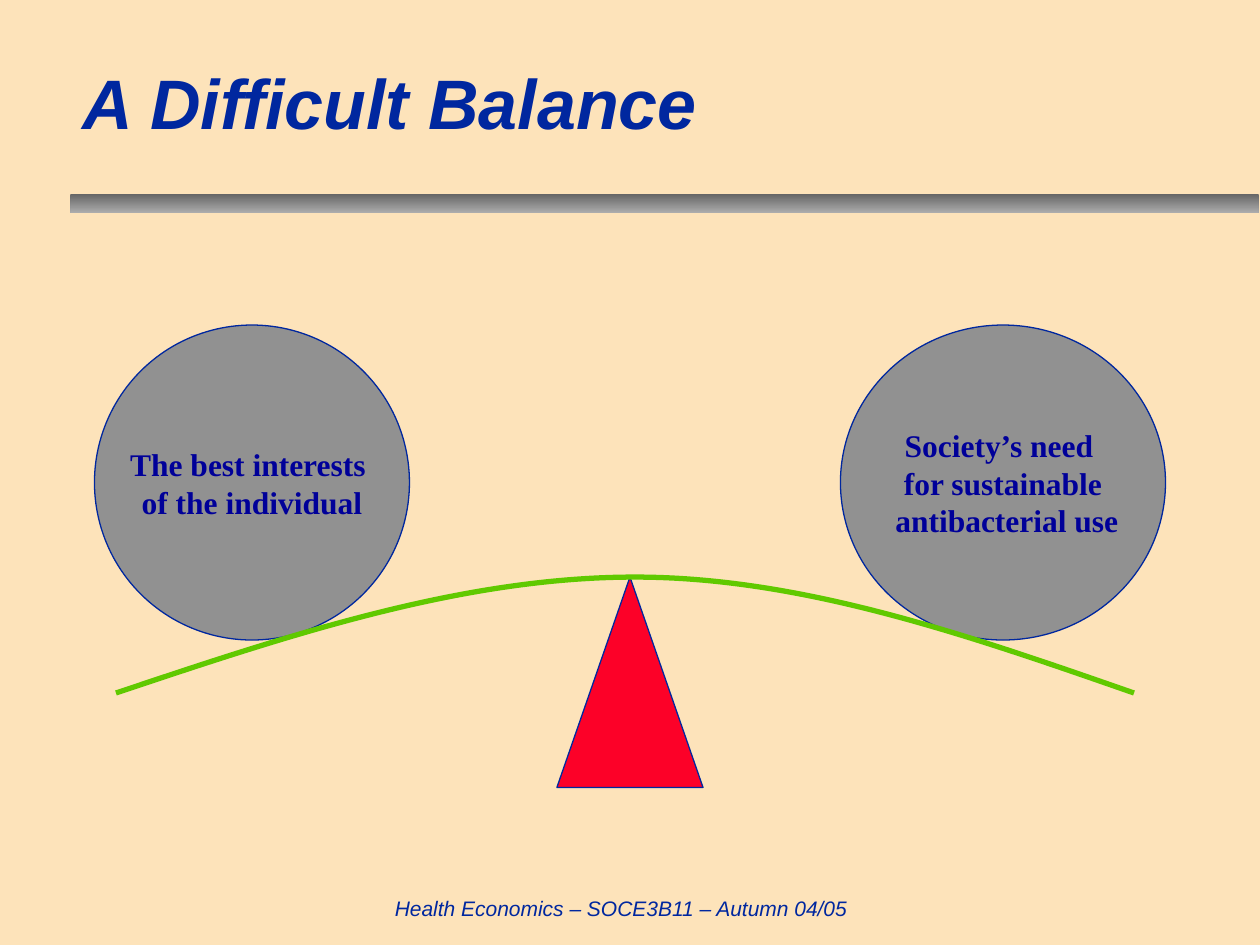
from lxml.etree import SubElement
from pptx import Presentation
from pptx.dml.color import RGBColor
from pptx.enum.shapes import MSO_SHAPE as Shape
from pptx.enum.text import MSO_ANCHOR as Anchor, PP_ALIGN as Align
from pptx.oxml.ns import qn
from pptx.util import Inches, Pt

CREAM = RGBColor(0xFD, 0xE3, 0xBA)
NAVY = RGBColor(0x00, 0x27, 0x9F)
TEXT_BLUE = RGBColor(0x00, 0x00, 0x99)
DARK_GRAY = RGBColor(0x66, 0x66, 0x66)
LIGHT_GRAY = RGBColor(0xAC, 0xAC, 0xAC)
BALL_GRAY = RGBColor(0x91, 0x91, 0x91)
RED = RGBColor(0xFC, 0x01, 0x28)
GREEN = RGBColor(0x60, 0xC9, 0x00)


def write_lines(shape, lines, font_name, size, color, align, bold=False, italic=False):
    frame = shape.text_frame
    frame.text = "\n".join(lines)
    frame.vertical_anchor = Anchor.MIDDLE
    for paragraph in frame.paragraphs:
        paragraph.alignment = align
        for run in paragraph.runs:
            font = run.font
            font.name, font.size = font_name, Pt(size)
            font.bold, font.italic = bold, italic
            font.color.rgb = color


def add_label(slide, box, text, size, align, bold=False):
    label = slide.shapes.add_textbox(*map(Inches, box))
    label.text_frame.word_wrap = True
    write_lines(label, [text], "Arial", size, NAVY, align, bold, italic=True)


def add_solid(slide, kind, box, color):
    shape = slide.shapes.add_shape(kind, *map(Inches, box))
    shape.shadow.inherit = False
    shape.fill.solid()
    shape.fill.fore_color.rgb = color
    shape.line.color.rgb = NAVY
    shape.line.width = Pt(0.75)
    return shape


def add_divider(slide, box):
    bar = slide.shapes.add_shape(Shape.RECTANGLE, *map(Inches, box))
    bar.shadow.inherit = False
    bar.line.fill.background()
    bar.fill.gradient()
    bar.fill.gradient_angle = 270  # top to bottom
    for stop, color in zip(bar.fill.gradient_stops, (DARK_GRAY, LIGHT_GRAY)):
        stop.color.rgb = color


def add_ball(slide, box, lines):
    ball = add_solid(slide, Shape.OVAL, box, BALL_GRAY)
    write_lines(ball, lines, "Times New Roman", 18, TEXT_BLUE, Align.CENTER, bold=True)
    ball.text_frame.word_wrap = False


def add_beam(slide, box):
    left, top, width, height = map(Inches, box)
    middle = Inches(5.04)
    builder = slide.shapes.build_freeform(left, top + height, scale=1.0)
    builder.add_line_segments([(middle, top), (left + width, top + height)], close=False)
    beam = builder.convert_to_shape()
    beam.shadow.inherit = False
    beam.fill.background()
    beam.line.color.rgb = GREEN
    beam.line.width = Pt(3)

    # Bend both straight segments into curves that are level at the middle
    half = middle - left
    rest = width - half
    curves = [
        [(half / 3, height / 2), (half * 2 / 3, 0), (half, 0)],
        [(half + rest / 3, 0), (half + rest * 2 / 3, height / 2), (width, height)],
    ]
    segments = list(beam._element.iter(qn("a:lnTo")))
    for segment, points in zip(segments, curves):
        segment.tag = qn("a:cubicBezTo")
        for point in list(segment):
            segment.remove(point)
        for x, y in points:
            SubElement(segment, qn("a:pt"), x=str(round(x)), y=str(round(y)))


def add_balance(slide, box):
    left, top, width, height = box
    # Pivot
    add_solid(slide, Shape.ISOSCELES_TRIANGLE, (left + 3.67, top + 2, 1.16, height - 2), RED)
    # Weights
    add_ball(slide, (left, top, 2.5, 2.5), ["The best interests ", "of the individual"])
    add_ball(slide, (left + width - 2.58, top, 2.58, 2.5),
             ["Society’s need ", "for sustainable", " antibacterial use"])
    # Bent beam
    add_beam(slide, (left + 0.17, top + 2, 8.08, 0.92))


def main():
    presentation = Presentation()
    presentation.slide_width, presentation.slide_height = Inches(10), Inches(7.5)
    slide = presentation.slides.add_slide(presentation.slide_layouts[6])
    slide.background.fill.solid()
    slide.background.fill.fore_color.rgb = CREAM

    # Header and footer
    add_divider(slide, (0.56, 1.54, 9.43, 0.15))
    add_label(slide, (0.02, 7.06, 9.82, 0.3), "Health Economics – SOCE3B11 – Autumn 04/05",
              12, Align.CENTER)
    add_label(slide, (0.56, 0.17, 8.88, 1.27), "A Difficult Balance", 40, Align.LEFT, bold=True)

    # Seesaw
    add_balance(slide, (0.75, 2.58, 8.5, 3.67))
    presentation.save("out.pptx")


if __name__ == "__main__":
    main()
